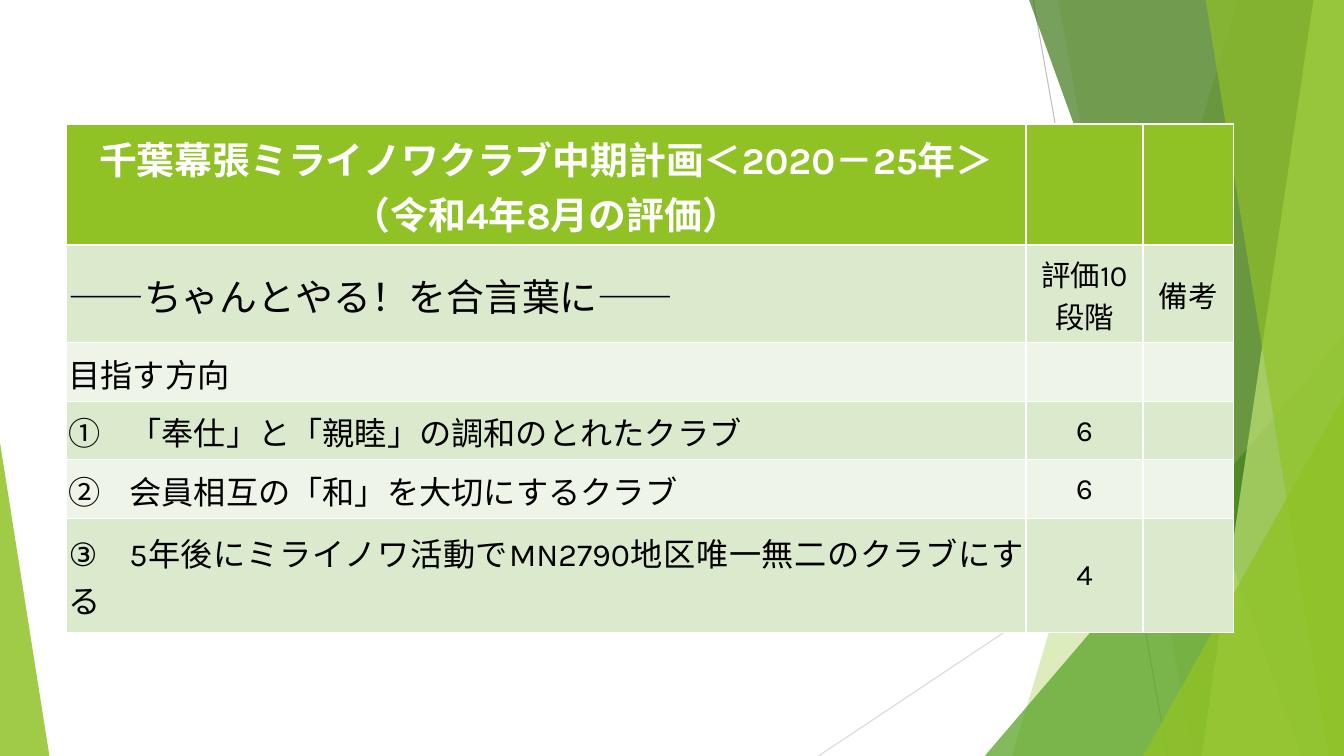
from pptx import Presentation
from pptx.dml.color import RGBColor
from pptx.enum.shapes import MSO_CONNECTOR, MSO_SHAPE
from pptx.enum.text import MSO_ANCHOR, PP_ALIGN
from pptx.oxml.ns import qn
from pptx.util import Pt
from lxml.etree import SubElement

WHITE = RGBColor(0xFF, 0xFF, 0xFF)
BLACK = RGBColor(0, 0, 0)
LIME = RGBColor(0x90, 0xC2, 0x26)
GREEN = RGBColor(0x54, 0xA0, 0x21)
FOREST = RGBColor(0x3F, 0x78, 0x19)
PALE_LIME = RGBColor(0xC0, 0xE4, 0x74)
BAND_DARK = RGBColor(0xDB, 0xE9, 0xCD)
BAND_LIGHT = RGBColor(0xEE, 0xF4, 0xE8)
GREY = RGBColor(0xBF, 0xBF, 0xBF)
LIGHT_GREY = RGBColor(0xD9, 0xD9, 0xD9)
WIDTH, HEIGHT = 960, 540

prs = Presentation()
prs.slide_width, prs.slide_height = Pt(WIDTH), Pt(HEIGHT)
slide = prs.slides.add_slide(prs.slide_layouts[6])
shapes = slide.shapes


def paint(facet, color, opacity):
    facet.shadow.inherit = False
    facet.line.fill.background()
    facet.fill.solid()
    facet.fill.fore_color.rgb = color
    tint = facet.fill._xPr.find(qn("a:solidFill"))[0]
    SubElement(tint, qn("a:alpha"), val=str(opacity * 1000))


def add_triangle(left, top, width, apex, color, opacity):
    triangle = shapes.add_shape(MSO_SHAPE.ISOSCELES_TRIANGLE, Pt(left), Pt(top),
                                Pt(width), Pt(HEIGHT - top))
    triangle.adjustments[0] = apex
    paint(triangle, color, opacity)


# Thin background lines
for x1, y1, x2, y2, color in [(738, 0, 834, 540, GREY),
                              (960, 290, 584.6, 540, LIGHT_GREY)]:
    ray = shapes.add_connector(MSO_CONNECTOR.STRAIGHT, Pt(x1), Pt(y1), Pt(x2), Pt(y2))
    ray.line.color.rgb = color
    ray.line.width = Pt(0.75)
    SubElement(ray._element.spPr, qn("a:effectLst"))

# Green facets, back to front: slanted bands (top x, bottom x) reach the right
# edge; right-hand triangles are given by (left, top)
facets = [
    ("band", 884.2, 722.9, LIME, 30),
    ("band", 756, 851.8, LIME, 20),
    ("triangle", 703.4, 239.8, GREEN, 72),
    ("band", 735.1, 929.5, FOREST, 70),
    ("band", 938.2, 858.2, PALE_LIME, 70),
    ("band", 861.1, 949, LIME, 65),
    ("triangle", 816.5, 283, LIME, 80),
]
for kind, a, b, color, opacity in facets:
    if kind == "triangle":
        add_triangle(a, b, WIDTH - a, 1, color, opacity)
    else:
        outline = shapes.build_freeform(Pt(a), Pt(0))
        outline.add_line_segments([(Pt(WIDTH), Pt(0)), (Pt(WIDTH), Pt(HEIGHT)),
                                   (Pt(b), Pt(HEIGHT))])
        paint(outline.convert_to_shape(), color, opacity)
add_triangle(0, 316.1, 35.3, 0, LIME, 85)

# Evaluation table: text and size of the plan column, score, remark
plan_rows = [
    ("千葉幕張ミライノワクラブ中期計画＜2020－25年＞（令和4年8月の評価）", 27, "", ""),
    ("――ちゃんとやる！を合言葉に――", 27, "評価10段階", "備考"),
    ("目指す方向", 23, "", ""),
    ("①\t「奉仕」と「親睦」の調和のとれたクラブ", 23, "6", ""),
    ("②\t会員相互の「和」を大切にするクラブ", 23, "6", ""),
    ("③\t5年後にミライノワ活動でMN2790地区唯一無二のクラブにする", 23, "4", ""),
]
row_heights = [86.4, 69.8, 41.8, 41.8, 41.8, 81.4]
column_widths = [685.4, 83.5, 64.8]
evaluation = shapes.add_table(len(row_heights), len(column_widths), Pt(47.5), Pt(88.6),
                              Pt(sum(column_widths)), Pt(sum(row_heights))).table
for column, width in zip(evaluation.columns, column_widths):
    column.width = Pt(width)

for r, (plan, plan_size, score, remark) in enumerate(plan_rows):
    evaluation.rows[r].height = Pt(row_heights[r])
    is_header = r == 0
    for c, text in enumerate((plan, score, remark)):
        cell = evaluation.cell(r, c)
        cell.fill.solid()
        cell.fill.fore_color.rgb = LIME if is_header else (BAND_LIGHT, BAND_DARK)[r % 2]
        if not text:
            continue
        cell.vertical_anchor = MSO_ANCHOR.MIDDLE
        cell.margin_left = cell.margin_right = cell.margin_top = Pt(1.5)
        cell.margin_bottom = Pt(0)
        cell.text = text
        entry = cell.text_frame.paragraphs[0]
        entry.alignment = PP_ALIGN.CENTER if is_header or c else PP_ALIGN.JUSTIFY
        entry.font.name = "Karla"
        entry.font.size = Pt(21 if c else plan_size)
        entry.font.bold = is_header
        entry.font.color.rgb = WHITE if is_header else BLACK
        if "\t" in text:
            # Tab stop after the circled number
            stops = entry._p.get_or_add_pPr()
            tab_list = stops.makeelement(qn("a:tabLst"))
            stops.insert(0, tab_list)
            SubElement(tab_list, qn("a:tab"), pos=str(Pt(43.5)), algn="l")

prs.save("out.pptx")
